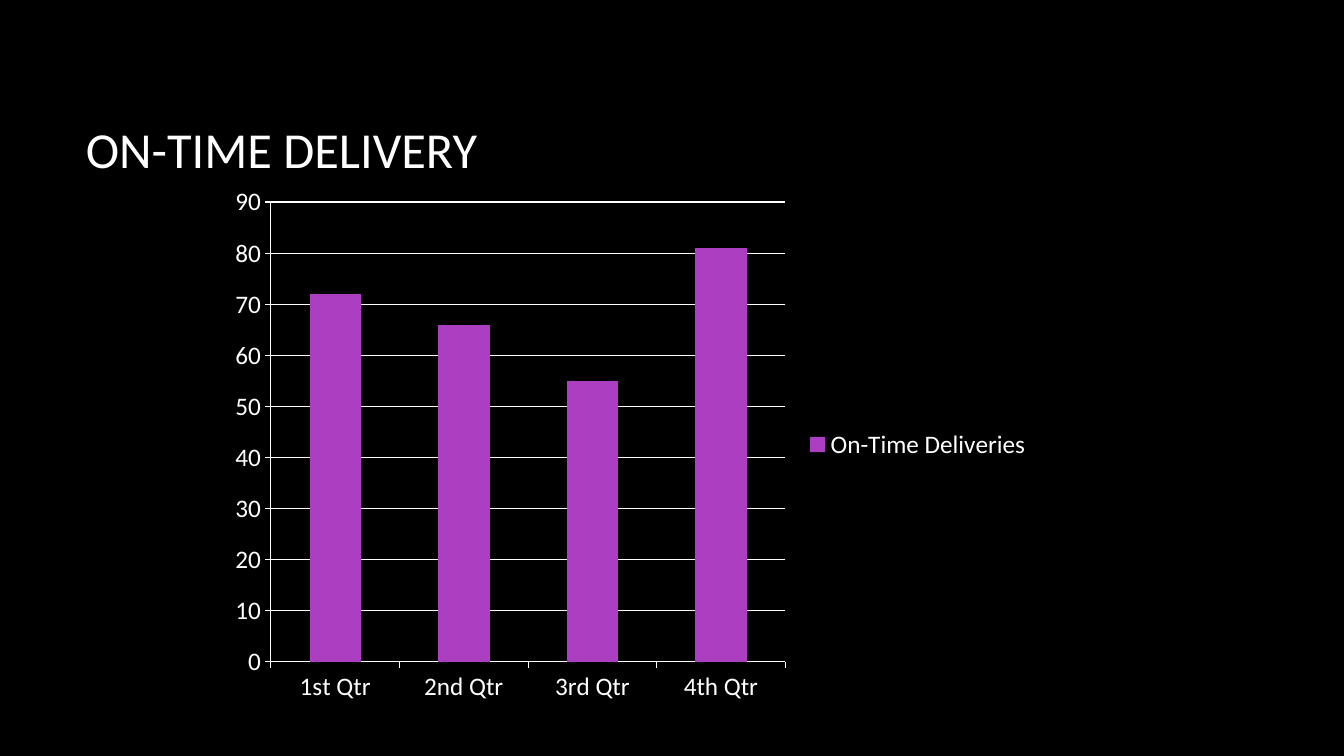
import pptx
import pptx.chart.data
import pptx.dml.color
import pptx.enum.chart
import pptx.enum.text
import pptx.util

TITLE = "ON-TIME DELIVERY"
SERIES = "On-Time Deliveries"
DELIVERIES = {"1st Qtr": 72, "2nd Qtr": 66, "3rd Qtr": 55, "4th Qtr": 81}

SLIDE_SIZE = (1344, 756)
TITLE_BOX = (76, 68, 1117, 160)
CHART_BOX = (219, 176, 823, 537)

FONT = "Calibri"
BLACK = pptx.dml.color.RGBColor(0x00, 0x00, 0x00)
WHITE = pptx.dml.color.RGBColor(0xFF, 0xFF, 0xFF)
PURPLE = pptx.dml.color.RGBColor(0xAC, 0x3E, 0xC1)
EMU_PER_PX = 914400 / 100.8


def px(*lengths):
    return [pptx.util.Emu(round(n * EMU_PER_PX)) for n in lengths]


def style_font(font, size, color):
    font.name = FONT
    font.size = pptx.util.Pt(size)
    font.color.rgb = color


def add_text(slide, text, box, size=18, color=WHITE):
    tf = slide.shapes.add_textbox(*px(*box)).text_frame
    tf.word_wrap = True
    tf.vertical_anchor = pptx.enum.text.MSO_ANCHOR.MIDDLE
    r = tf.paragraphs[0].add_run()
    r.text = text
    style_font(r.font, size, color)


def style_line(line):
    line.color.rgb = WHITE
    line.width = pptx.util.Pt(0.75)


def add_delivery_chart(slide):
    data = pptx.chart.data.CategoryChartData()
    data.categories = list(DELIVERIES)
    data.add_series(SERIES, list(DELIVERIES.values()))
    kind = pptx.enum.chart.XL_CHART_TYPE.COLUMN_STACKED
    chart = slide.shapes.add_chart(kind, *px(*CHART_BOX), data).chart
    style_font(chart.font, 18, WHITE)
    chart.has_title = False
    chart.has_legend = True
    chart.legend.position = pptx.enum.chart.XL_LEGEND_POSITION.RIGHT
    chart.legend.include_in_layout = False

    plot = chart.plots[0]
    plot.gap_width = 150
    plot.overlap = 100
    plot.vary_by_categories = False
    fill = plot.series[0].format.fill
    fill.solid()
    fill.fore_color.rgb = PURPLE

    for axis in (chart.category_axis, chart.value_axis):
        axis.major_tick_mark = pptx.enum.chart.XL_TICK_MARK.OUTSIDE
        axis.minor_tick_mark = pptx.enum.chart.XL_TICK_MARK.NONE
        style_line(axis.format.line)
    value_axis = chart.value_axis
    value_axis.minimum_scale = 0
    value_axis.maximum_scale = 90
    value_axis.major_unit = 10
    value_axis.has_major_gridlines = True
    style_line(value_axis.major_gridlines.format.line)


def main():
    prs = pptx.Presentation()
    prs.slide_width, prs.slide_height = px(*SLIDE_SIZE)
    slide = prs.slides.add_slide(prs.slide_layouts[6])
    slide.background.fill.solid()
    slide.background.fill.fore_color.rgb = BLACK
    add_text(slide, TITLE, TITLE_BOX, size=36)
    add_delivery_chart(slide)
    prs.save("out.pptx")


if __name__ == "__main__":
    main()
